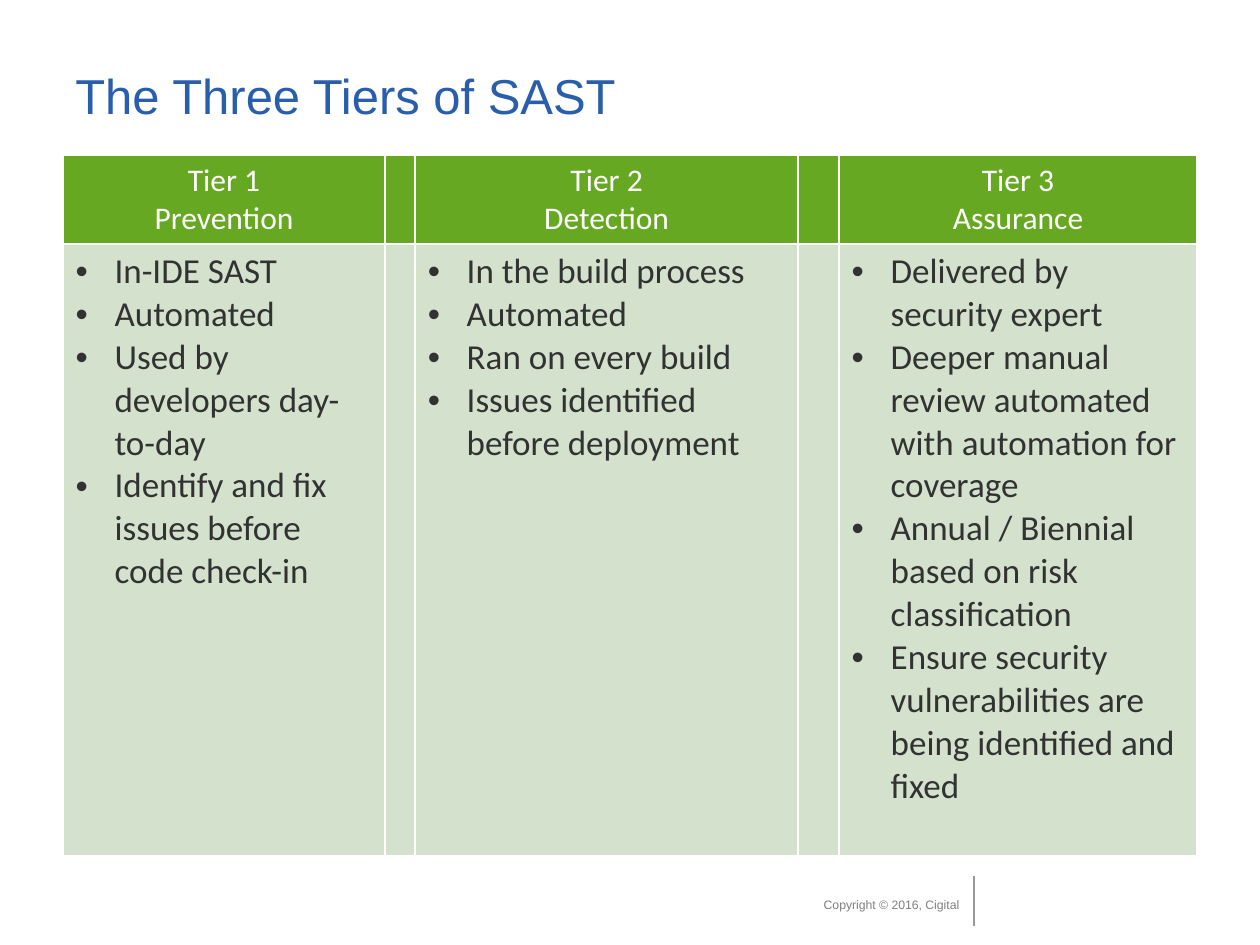
import dataclasses

import pptx
import pptx.dml.color
import pptx.enum.shapes
import pptx.enum.text
import pptx.oxml
import pptx.oxml.ns
import pptx.util

EMU_PER_PX = 914400 / 126
ALIGN = pptx.enum.text.PP_ALIGN


@dataclasses.dataclass(frozen=True)
class Theme:
    heading_font: str = "Arial"
    table_font: str = "Calibri"
    title_color: str = "295EAC"
    header_fill: str = "67A822"
    header_text: str = "FFFFFF"
    body_fill: str = "D3E1CD"
    body_text: str = "323233"
    border: str = "FFFFFF"
    footer_text: str = "808080"
    footer_rule: str = "98989A"
    title_size: int = 28
    header_size: int = 18
    body_size: int = 20
    footer_size: int = 7


def px(length):
    return pptx.util.Emu(round(length * EMU_PER_PX))


def rgb(color):
    return pptx.dml.color.RGBColor.from_string(color)


def add_element(parent, xml):
    """Append the XML of one drawing element to parent."""
    namespace = pptx.oxml.ns.nsdecls("a")
    parent.append(pptx.oxml.parse_xml(xml.replace("/>", f" {namespace}/>", 1)
                                      if xml.endswith("/>") and xml.count("<") == 1
                                      else xml.replace(">", f" {namespace}>", 1)))


class SlideBuilder:
    def __init__(self, slide, theme):
        self.slide = slide
        self.theme = theme

    def format_paragraph(self, paragraph, font, size, color, align):
        paragraph.alignment = align
        for run in paragraph.runs:
            run.font.name = font
            run.font.size = pptx.util.Pt(size)
            run.font.bold = False
            run.font.color.rgb = rgb(color)

    def text(self, left, top, width, height, words, size, color, align):
        box = self.slide.shapes.add_textbox(px(left), px(top), px(width), px(height))
        frame = box.text_frame
        frame.word_wrap = True
        frame.vertical_anchor = pptx.enum.text.MSO_ANCHOR.MIDDLE
        frame.text = words
        self.format_paragraph(frame.paragraphs[0], self.theme.heading_font, size, color, align)

    def vertical_rule(self, left, top, bottom, color):
        rule = self.slide.shapes.add_connector(
            pptx.enum.shapes.MSO_CONNECTOR.STRAIGHT, px(left), px(top), px(left), px(bottom))
        rule.line.color.rgb = rgb(color)
        rule.line.width = pptx.util.Pt(1)
        add_element(rule.element.spPr, "<a:effectLst/>")

    def bullet(self, paragraph, indent):
        properties = paragraph._p.get_or_add_pPr()
        properties.set("marL", str(px(indent)))
        properties.set("indent", str(-px(indent)))
        add_element(properties, '<a:buFont typeface="Arial"/>')
        add_element(properties, '<a:buChar char="•"/>')

    def cell_style(self, cell, fill):
        properties = cell._tc.get_or_add_tcPr()
        for side in ("lnL", "lnR", "lnT", "lnB"):
            add_element(properties, f'<a:{side} w="{pptx.util.Pt(1)}"><a:solidFill>'
                        f'<a:srgbClr val="{self.theme.border}"/></a:solidFill></a:{side}>')
        cell.fill.solid()
        cell.fill.fore_color.rgb = rgb(fill)

    def tier_table(self, left, top, widths, heights, tiers):
        """Tiers fill every second column; the columns between are empty gaps."""
        theme = self.theme
        table = self.slide.shapes.add_table(
            len(heights), len(widths), px(left), px(top), px(sum(widths)), px(sum(heights))).table
        table.first_row = False
        table.horz_banding = False
        for column, width in zip(table.columns, widths):
            column.width = px(width)
        for row, height, fill in zip(table.rows, heights, (theme.header_fill, theme.body_fill)):
            row.height = px(height)
            for cell in row.cells:
                self.cell_style(cell, fill)
        for index, (heading, points) in enumerate(tiers):
            header, body = (table.cell(row, 2 * index).text_frame for row in (0, 1))
            header.text = "\n".join(heading)
            for paragraph in header.paragraphs:
                self.format_paragraph(paragraph, theme.table_font, theme.header_size,
                                      theme.header_text, ALIGN.CENTER)
            body.text = "\n".join(points)
            for paragraph in body.paragraphs:
                self.bullet(paragraph, 39)
                self.format_paragraph(paragraph, theme.table_font, theme.body_size,
                                      theme.body_text, ALIGN.LEFT)


TIERS = [
    (("Tier 1", "Prevention"),
     ("In-IDE SAST", "Automated", "Used by developers day-to-day",
      "Identify and fix issues before code check-in")),
    (("Tier 2", "Detection"),
     ("In the build process", "Automated", "Ran on every build",
      "Issues identified before deployment")),
    (("Tier 3", "Assurance"),
     ("Delivered by security expert",
      "Deeper manual review automated with automation for coverage",
      "Annual / Biennial based on risk classification",
      "Ensure security vulnerabilities are being identified and fixed")),
]


def main():
    presentation = pptx.Presentation()
    presentation.slide_width = px(1260)
    presentation.slide_height = px(945)
    theme = Theme()
    builder = SlideBuilder(presentation.slides.add_slide(presentation.slide_layouts[6]), theme)
    builder.vertical_rule(974, 876, 926, theme.footer_rule)
    builder.text(523, 876, 737, 58, "Copyright © 2016, Cigital",
                 theme.footer_size, theme.footer_text, ALIGN.CENTER)
    builder.text(63, 38, 1134, 113, "The Three Tiers of SAST",
                 theme.title_size, theme.title_color, ALIGN.LEFT)
    builder.tier_table(63, 155, (322, 30, 383, 41, 358), (89, 612), TIERS)
    presentation.save("out.pptx")


if __name__ == "__main__":
    main()
